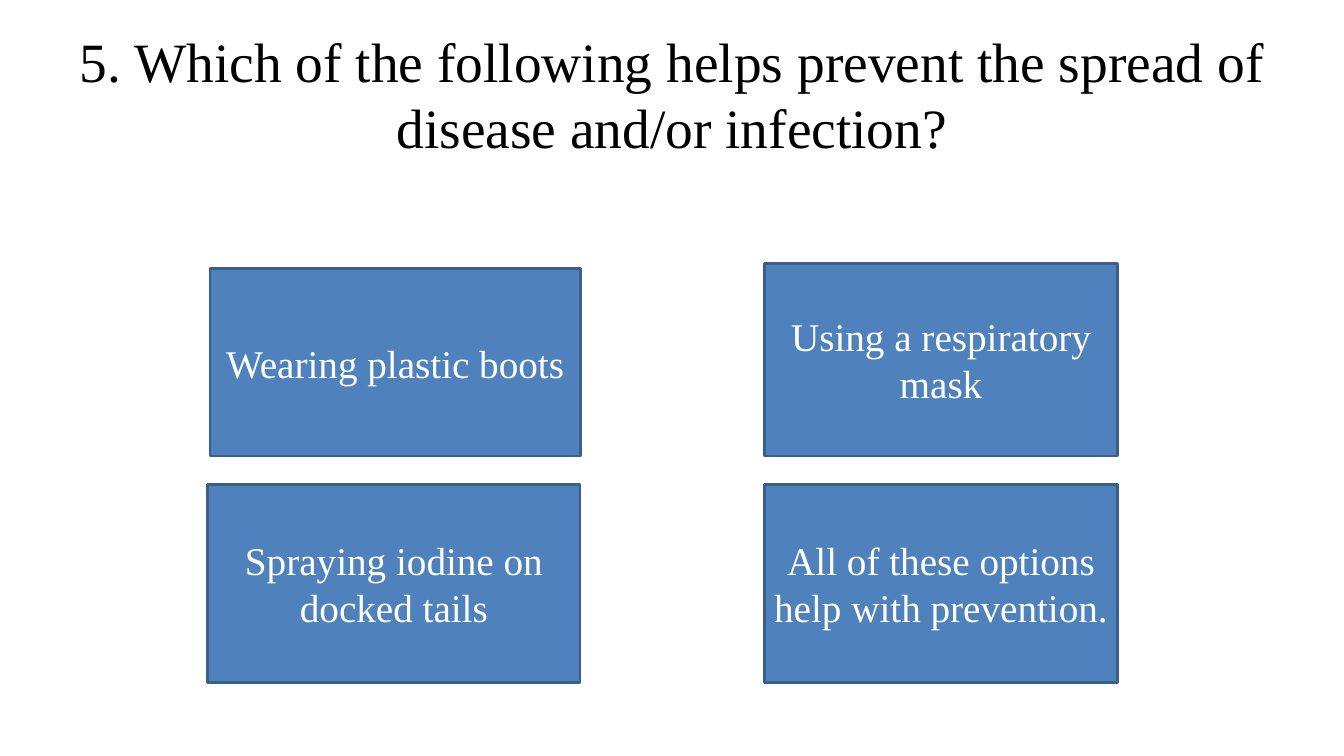
from pptx import Presentation
from pptx.dml.color import RGBColor
from pptx.enum.shapes import MSO_SHAPE
from pptx.enum.text import MSO_ANCHOR, PP_ALIGN
from pptx.util import Pt

RECTANGLE = MSO_SHAPE.RECTANGLE
MIDDLE = MSO_ANCHOR.MIDDLE
CENTER = PP_ALIGN.CENTER

# Content: each answer has its column, row, left edge and top edge
QUESTION = "5. Which of the following helps prevent the spread of disease and/or infection?"
ANSWERS = [
    ("Wearing plastic boots", 0, 0, 150, 192),
    ("Spraying iodine on docked tails", 0, 1, 148.4, 346.3),
    ("All of these options help with prevention.", 1, 1, 545.8, 346.3),
    ("Using a respiratory mask", 1, 0, 545.8, 188.2),
]

# Answers in a column share a right edge, answers in a row a bottom edge
COLUMN_RIGHTS = (414.4, 798.5)
ROW_BOTTOMS = (325.8, 487.4)

COLORS = {"question": "000000", "answer": "FFFFFF", "fill": "4F81BD", "border": "3A5F8C"}
FONT = "Times New Roman"


def color(key):
    return RGBColor.from_string(COLORS[key])


def write(shape, text, *, size, ink):
    frame = shape.text_frame
    frame.word_wrap = True
    frame.vertical_anchor = MIDDLE
    paragraph = frame.paragraphs[0]
    paragraph.alignment = CENTER
    run = paragraph.add_run()
    run.text = text
    run.font.name = FONT
    run.font.size = Pt(size)
    run.font.color.rgb = color(ink)


deck = Presentation()
deck.slide_width, deck.slide_height = Pt(960), Pt(540)
slide = deck.slides.add_slide(deck.slide_layouts[6])

# Question
question = slide.shapes.add_textbox(Pt(48), Pt(21.6), Pt(864), Pt(90))
write(question, QUESTION, size=39.6, ink="question")

# Answer boxes
for text, column, row, left, top in ANSWERS:
    width = COLUMN_RIGHTS[column] - left
    height = ROW_BOTTOMS[row] - top
    answer = slide.shapes.add_shape(RECTANGLE, Pt(left), Pt(top), Pt(width), Pt(height))
    answer.shadow.inherit = False
    answer.fill.solid()
    answer.fill.fore_color.rgb = color("fill")
    answer.line.color.rgb = color("border")
    answer.line.width = Pt(2)
    write(answer, text, size=28, ink="answer")

deck.save("out.pptx")
